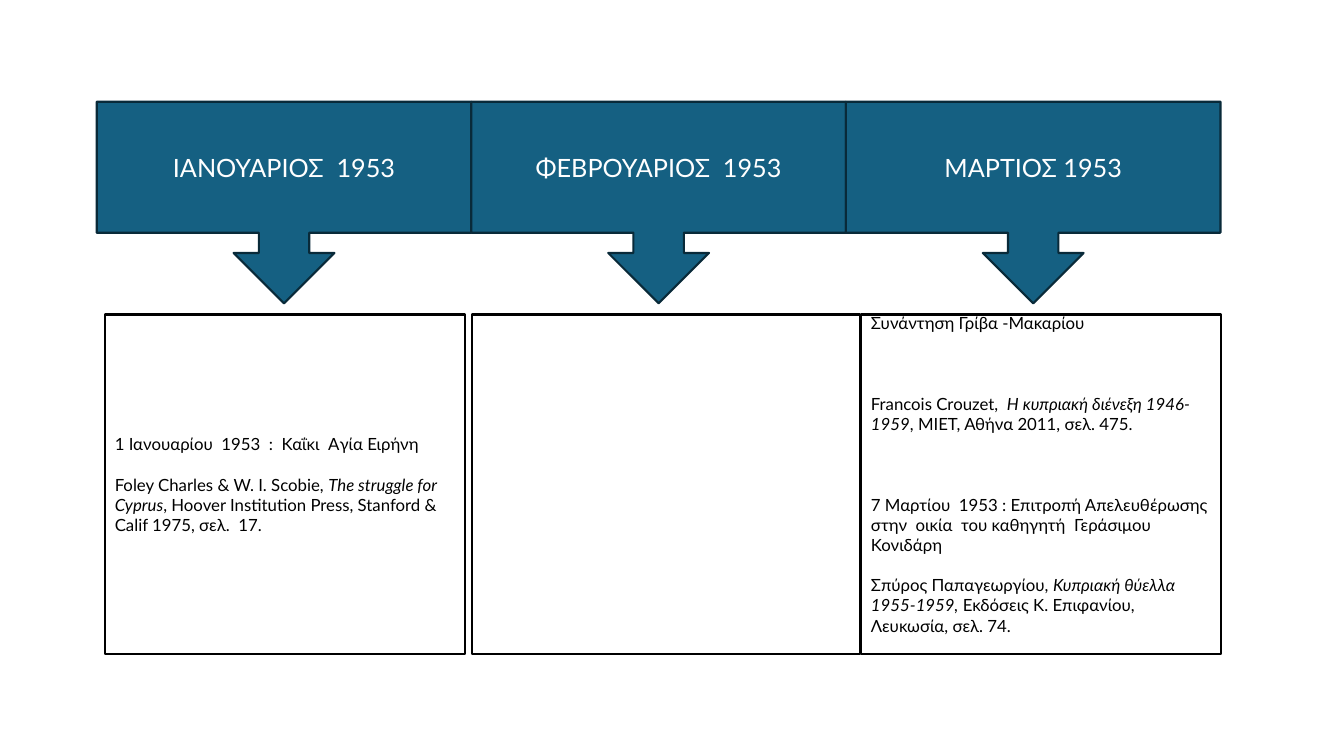
from pptx import Presentation
from pptx.dml.color import RGBColor
from pptx.enum.shapes import MSO_SHAPE
from pptx.enum.text import MSO_ANCHOR, PP_ALIGN
from pptx.util import Inches, Pt

CALLOUT, RECT = MSO_SHAPE.DOWN_ARROW_CALLOUT, MSO_SHAPE.RECTANGLE
MIDDLE = MSO_ANCHOR.MIDDLE
LEFT, CENTER = PP_ALIGN.LEFT, PP_ALIGN.CENTER
TEAL = RGBColor(0x15, 0x60, 0x82)
NAVY = RGBColor(0x09, 0x2A, 0x39)
WHITE = RGBColor(0xFF, 0xFF, 0xFF)
BLACK = RGBColor(0, 0, 0)
FONT = "Lato"
LINE = 14.4  # height of one 12 pt line, in points

# Content: paragraphs are (lines of space before, [(text, italic), ...])
MONTHS = ["ΙΑΝΟΥΑΡΙΟΣ  1953", "ΦΕΒΡΟΥΑΡΙΟΣ  1953", "ΜΑΡΤΙΟΣ 1953"]
JANUARY = [
    (0, [("1 Ιανουαρίου  1953  :  Καΐκι  Aγία Ειρήνη", False)]),
    (1, [("Foley Charles & W. I. Scobie, ", False),
         ("The struggle for Cyprus", True),
         (", Hoover Institution Press, Stanford & Calif 1975, σελ.  17.", False)]),
]
MARCH = [
    (0, [("Συνάντηση Γρίβα -Μακαρίου", False)]),
    (3, [("Francois Crouzet,  ", False),
         ("Η κυπριακή διένεξη 1946-1959", True),
         (", ΜΙΕΤ, Αθήνα 2011, σελ. 475.", False)]),
    (3, [("7 Μαρτίου  1953 : Επιτροπή Απελευθέρωσης στην  οικία  "
          "του καθηγητή  Γεράσιμου Κονιδάρη", False)]),
    (1, [("Σπύρος Παπαγεωργίου, ", False),
         ("Κυπριακή θύελλα 1955-1959,", True),
         (" Εκδόσεις Κ. Επιφανίου, Λευκωσία, σελ. 74.", False)]),
]
# Event boxes: left, width, top inset, bottom inset, paragraphs
EVENTS = [
    (1.04, 3.57, 0.05, 0.05, JANUARY),
    (8.54, 3.57, 0, 0.2, MARCH),
    (4.68, 3.85, 0.05, 0.05, []),
]

prs = Presentation()
prs.slide_width, prs.slide_height = Inches(13.33), Inches(7.5)
slide = prs.slides.add_slide(prs.slide_layouts[6])


def add_box(kind, left, top, width, height, fill, edge):
    box = slide.shapes.add_shape(kind, Inches(left), Inches(top),
                                 Inches(width), Inches(height))
    box.shadow.inherit = False
    box.fill.solid()
    box.fill.fore_color.rgb = fill
    box.line.color.rgb = edge
    box.line.width = Pt(1.5)
    box.text_frame.word_wrap = True
    box.text_frame.vertical_anchor = MIDDLE
    return box.text_frame


def write(frame, paras, size, color, align):
    for i, (gap, runs) in enumerate(paras):
        para = frame.add_paragraph() if i else frame.paragraphs[0]
        para.alignment = align
        if gap:
            para.space_before = Pt(gap * LINE)
        for text, slant in runs:
            run = para.add_run()
            run.text = text
            font = run.font
            font.name, font.size, font.italic = FONT, Pt(size), slant
            font.color.rgb = color


# Month callouts, side by side
START, PITCH = 0.96, 3.715
for i, month in enumerate(MONTHS):
    frame = add_box(CALLOUT, START + i * PITCH, 1.01, PITCH, 2, TEAL, NAVY)
    write(frame, [(0, [(month, False)])], 18, WHITE, CENTER)

# Event boxes under the arrows
for left, width, above, below, paras in EVENTS:
    frame = add_box(RECT, left, 3.12, width, 3.37, WHITE, BLACK)
    frame.margin_top, frame.margin_bottom = Inches(above), Inches(below)
    write(frame, paras, 12, BLACK, LEFT)

prs.save("out.pptx")
